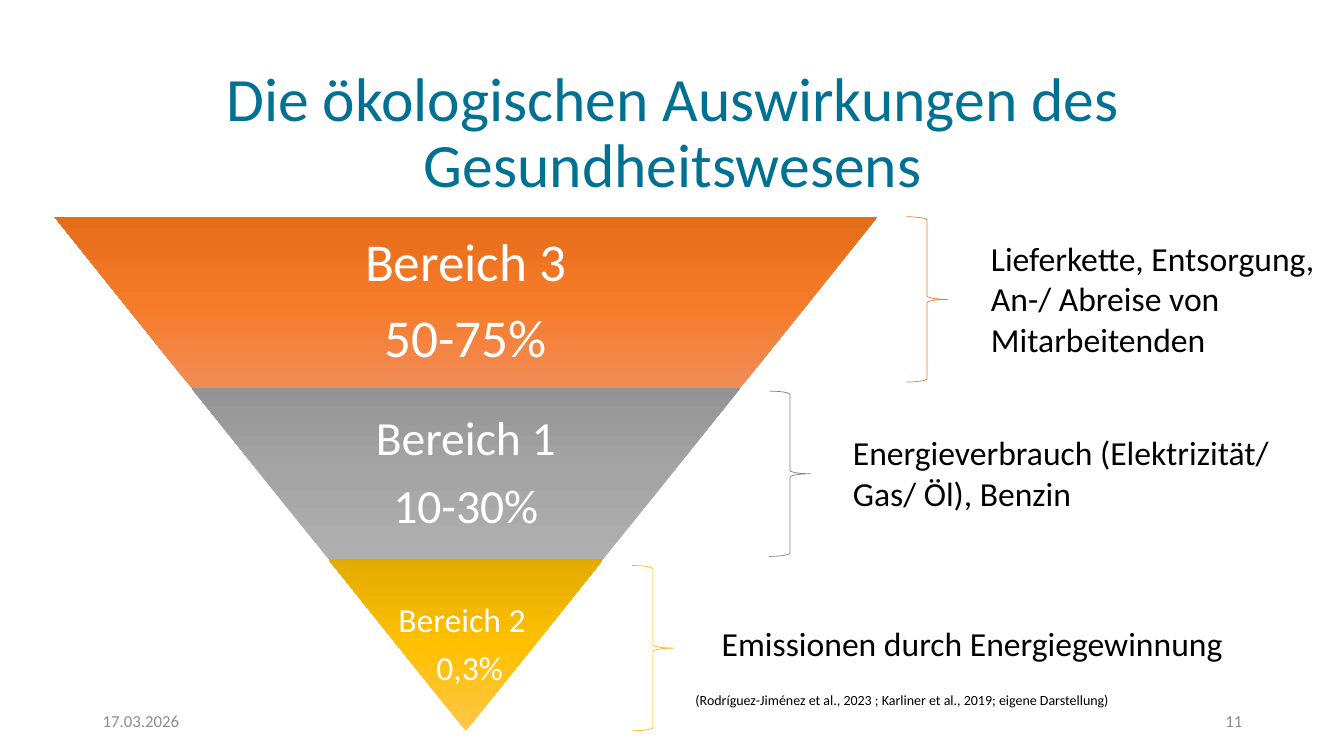
from copy import deepcopy

from pptx import Presentation
from pptx.dml.color import RGBColor
from pptx.enum.shapes import MSO_SHAPE
from pptx.enum.text import MSO_ANCHOR, PP_ALIGN
from pptx.util import Inches, Pt

SLIDE = (0, 0, 13.33, 7.5)
FONT = "Calibri"
TIERS = [
    (["Bereich 3", "50-75%"], 38, 65, 0.05, ["F18C57", "F67B28", "E56C19"]),
    (["Bereich 1", "10-30%"], 34, 65, 0.05, ["AFAFAF", "A5A5A5", "939393"]),
    (["Bereich 2 ", " 0,3%"], 24, 100, 0.03, ["FFC64B", "FFC000", "E3AB00"]),
]
NOTES = [
    ("Lieferkette, Entsorgung, An-/ Abreise von Mitarbeitenden",
     "ED7D31", (49.01, 3.14, 51.13, 25.69), True),
    ("Energieverbrauch (Elektrizität/ Gas/ Öl), Benzin",
     "808080", (29.6, 40.98, 66.86, 17.84), True),
    ("Emissionen durch Energiegewinnung",
     "FFC000", (11.19, 78.04, 74.93, 9.8), False),
]


def color(text):
    return RGBColor.from_string(text)


def share(box, left, top, width, height):
    x, y, w, h = box
    return (x + w * left / 100, y + h * top / 100,
            w * width / 100, h * height / 100)


def style(item, values):
    for name, value in values.items():
        setattr(item, name, value)


def write(slide, box, lines, size, ink="000000", align=PP_ALIGN.LEFT,
          anchor=MSO_ANCHOR.TOP, wrap=True, inset=None, para=None):
    frame = slide.shapes.add_textbox(*map(Inches, box)).text_frame
    style(frame, {"word_wrap": wrap, "vertical_anchor": anchor})
    if inset is not None:
        sides = ("left", "right", "top", "bottom")
        style(frame, {f"margin_{side}": Inches(inset) for side in sides})
    frame.text = "\n".join(lines)
    for part in frame.paragraphs:
        style(part, {"alignment": align, **(para or {})})
        for run in part.runs:
            style(run.font, {"name": FONT, "size": Pt(size)})
            run.font.color.rgb = color(ink)


def shade(fill, tints):
    fill.gradient()
    fill.gradient_angle = 270
    stops = fill.gradient_stops
    first = stops[0]._element
    first.addnext(deepcopy(first))
    for i, (stop, tint) in enumerate(zip(fill.gradient_stops, tints)):
        stop.position = i / (len(tints) - 1)
        stop.color.rgb = color(tint)


def funnel(slide, box):
    count = len(TIERS)
    step = 100 / count
    for i, (lines, size, width, inset, tints) in enumerate(TIERS):
        tier = share(box, step * i / 2, step * i, 100 - step * i, step)
        shape = slide.shapes.add_shape(MSO_SHAPE.TRAPEZOID, *map(Inches, tier))
        style(shape, {"rotation": 180})
        shape.adjustments[0] = 0.8
        shape.shadow.inherit = False
        shape.line.fill.background()
        shade(shape.fill, tints)
        label = share(tier, (100 - width) / 2, 0, width, 100)
        write(slide, label, lines, size, "FFFFFF", PP_ALIGN.CENTER,
              MSO_ANCHOR.MIDDLE, inset=inset,
              para={"line_spacing": 0.9, "space_after": Pt(0.35 * size)})


def notes(slide, box):
    for i, (text, ink, place, wrap) in enumerate(NOTES):
        spot = share(box, 19.26 * (2 - i), 33.92 * i, 5.81, 32.16)
        brace = slide.shapes.add_shape(MSO_SHAPE.RIGHT_BRACE,
                                       *map(Inches, spot))
        brace.shadow.inherit = False
        brace.fill.background()
        brace.line.color.rgb = color(ink)
        brace.line.width = Pt(0.5)
        write(slide, share(box, *place), [text], 24, wrap=wrap)


def title(slide, box):
    write(slide, box, ["Die ökologischen Auswirkungen des Gesundheitswesens"],
          44, "007193", PP_ALIGN.CENTER, MSO_ANCHOR.MIDDLE,
          para={"line_spacing": 0.9})


def footer(slide, box):
    for text, left, align in [("17.03.2026", 0, PP_ALIGN.LEFT),
                              ("11", 73.91, PP_ALIGN.RIGHT)]:
        write(slide, share(box, left, 0, 26.09, 100), [text], 12, "8C8C8C",
              align, MSO_ANCHOR.MIDDLE)


def source(slide, box):
    text = ("(Rodríguez-Jiménez et al., 2023 ; Karliner et al., 2019; "
            "eigene Darstellung)")
    write(slide, box, [text], 10, wrap=False)


def main():
    deck = Presentation()
    style(deck, {"slide_width": Inches(SLIDE[2]),
                 "slide_height": Inches(SLIDE[3])})
    slide = deck.slides.add_slide(deck.slide_layouts[6])
    funnel(slide, share(SLIDE, 4.05, 28.67, 61.22, 68))
    footer(slide, share(SLIDE, 6.9, 92.67, 86.27, 5.33))
    title(slide, share(SLIDE, 13.13, 8.13, 73.89, 19.33))
    notes(slide, share(SLIDE, 47.04, 28.67, 52.96, 68))
    source(slide, share(SLIDE, 51.01, 90.8, 32.78, 3.6))
    deck.save("out.pptx")


if __name__ == "__main__":
    main()
